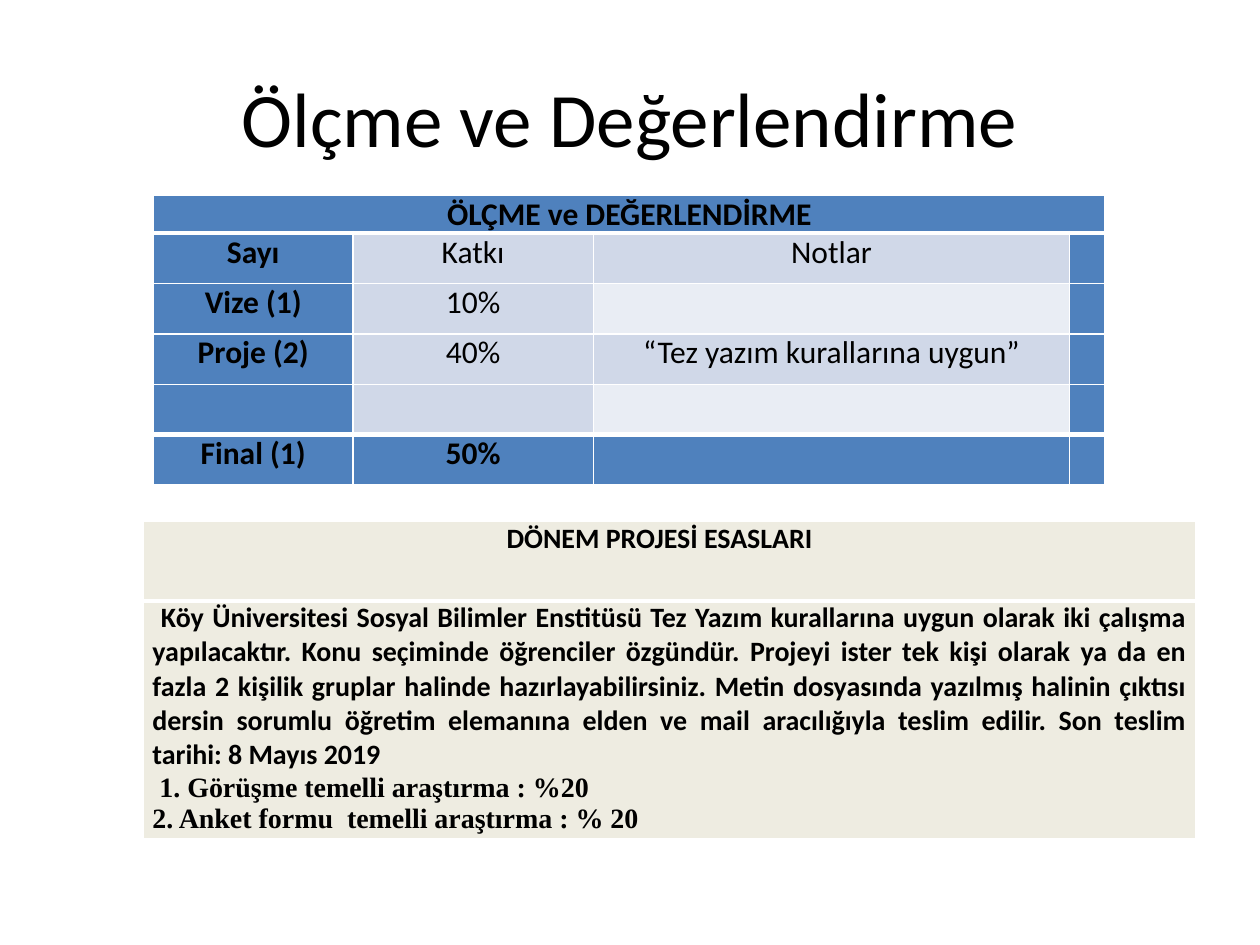
from dataclasses import dataclass

from lxml import etree
from pptx import Presentation
from pptx import util as u
from pptx.dml import color
from pptx.enum import text
from pptx.oxml import ns


@dataclass(frozen=True)
class Theme:
    ink: str = "000000"
    border: str = "FFFFFF"
    blue: str = "4F81BD"
    band: str = "D0D8E8"
    pale: str = "E9EDF4"
    sand: str = "EEECE1"
    font: str = "Calibri"
    serif: str = "Times New Roman"
    title: int = 44
    grades: int = 18
    project: int = 16
    thin: int = 1
    thick: int = 3
    inset: float = 0.07


THEME = Theme()

GRADES = [
    ("ÖLÇME ve DEĞERLENDİRME", "", "", ""),
    ("Sayı", "Katkı", "Notlar", ""),
    ("Vize (1)", "10%", "", ""),
    ("Proje (2)", "40%", "“Tez yazım kurallarına uygun”", ""),
    ("", "", "", ""),
    ("Final (1)", "50%", "", ""),
]
PROJECT_TITLE = "DÖNEM PROJESİ ESASLARI"
PROJECT_RULES = (
    " Köy Üniversitesi Sosyal Bilimler Enstitüsü Tez Yazım kurallarına uygun olarak "
    "iki çalışma yapılacaktır. Konu seçiminde öğrenciler özgündür. Projeyi ister tek "
    "kişi olarak ya da en fazla 2 kişilik gruplar halinde hazırlayabilirsiniz. Metin "
    "dosyasında yazılmış halinin çıktısı dersin sorumlu öğretim elemanına elden ve "
    "mail aracılığıyla teslim edilir. Son teslim tarihi: 8 Mayıs 2019"
)
PROJECT_PARTS = [
    " 1. Görüşme temelli araştırma : %20",
    "2. Anket formu  temelli araştırma : % 20",
]


def style(paragraph, size, bold=False, font=THEME.font, align=text.PP_ALIGN.CENTER):
    paragraph.alignment = align
    paragraph.font.name = font
    paragraph.font.size = u.Pt(size)
    paragraph.font.bold = bold
    paragraph.font.color.rgb = color.RGBColor.from_string(THEME.ink)


def set_borders(cell, top, bottom):
    properties = cell._tc.get_or_add_tcPr()
    sides = {"lnL": THEME.thin, "lnR": THEME.thin, "lnT": top, "lnB": bottom}
    for index, (side, width) in enumerate(sides.items()):
        line = etree.Element(ns.qn(f"a:{side}"), w=str(u.Pt(width)))
        fill = etree.SubElement(line, ns.qn("a:solidFill"))
        etree.SubElement(fill, ns.qn("a:srgbClr"), val=THEME.border)
        properties.insert(index, line)


def format_cell(cell, fill, top=THEME.thin, bottom=THEME.thin):
    cell.margin_left = cell.margin_right = u.Inches(THEME.inset)
    cell.margin_top = cell.margin_bottom = 0
    cell.fill.solid()
    cell.fill.fore_color.rgb = color.RGBColor.from_string(fill)
    set_borders(cell, top, bottom)


def add_grid(slide, left, top, columns, rows):
    frame = slide.shapes.add_table(
        len(rows), len(columns), u.Inches(left), u.Inches(top),
        u.Inches(sum(columns)), u.Inches(sum(rows)))
    table = frame.table
    table.first_row = table.horz_banding = False
    for column, width in zip(table.columns, columns):
        column.width = u.Inches(width)
    for row, height in zip(table.rows, rows):
        row.height = u.Inches(height)
    return table


def add_title(slide, words):
    box = slide.shapes.add_textbox(
        u.Inches(0.5), u.Inches(0.3), u.Inches(9), u.Inches(1.25))
    frame = box.text_frame
    frame.word_wrap = True
    frame.vertical_anchor = text.MSO_ANCHOR.MIDDLE
    frame.text = words
    style(frame.paragraphs[0], THEME.title)


def grade_fill(row, column, last):
    if row in (0, last) or column in (0, 3):
        return THEME.blue
    if column == 2 and row % 2 == 0:
        return THEME.pale
    return THEME.band


def add_grades(slide):
    last = len(GRADES) - 1
    table = add_grid(slide, 1.22, 1.55, [1.58, 1.91, 3.78, 0.28], [0.3] + [0.4] * last)
    for row, entries in enumerate(GRADES):
        for column, words in enumerate(entries):
            cell = table.cell(row, column)
            format_cell(
                cell, grade_fill(row, column, last),
                top=THEME.thick if row in (1, last) else THEME.thin,
                bottom=THEME.thick if row in (0, last - 1) else THEME.thin)
            cell.text = words
            style(cell.text_frame.paragraphs[0], THEME.grades,
                  bold=column == 0 or row in (0, last))
    table.cell(0, 0).merge(table.cell(0, 3))


def add_project(slide):
    table = add_grid(slide, 1.14, 4.14, [8.35], [0.63, 1.89])
    heading, body = table.cell(0, 0), table.cell(1, 0)
    format_cell(heading, THEME.sand, bottom=THEME.thick)
    heading.margin_right = u.Inches(0.23)
    heading.text = PROJECT_TITLE
    style(heading.text_frame.paragraphs[0], THEME.project, bold=True)

    format_cell(body, THEME.sand, top=THEME.thick)
    body.text = "\n".join([PROJECT_RULES] + PROJECT_PARTS)
    for index, paragraph in enumerate(body.text_frame.paragraphs):
        style(paragraph, THEME.project, bold=True,
              font=THEME.serif if index else THEME.font,
              align=text.PP_ALIGN.JUSTIFY)


def main():
    presentation = Presentation()
    presentation.slide_width = u.Inches(10)
    presentation.slide_height = u.Inches(7.5)
    slide = presentation.slides.add_slide(presentation.slide_layouts[6])
    add_title(slide, "Ölçme ve Değerlendirme")
    add_grades(slide)
    add_project(slide)
    presentation.save("out.pptx")


if __name__ == "__main__":
    main()
